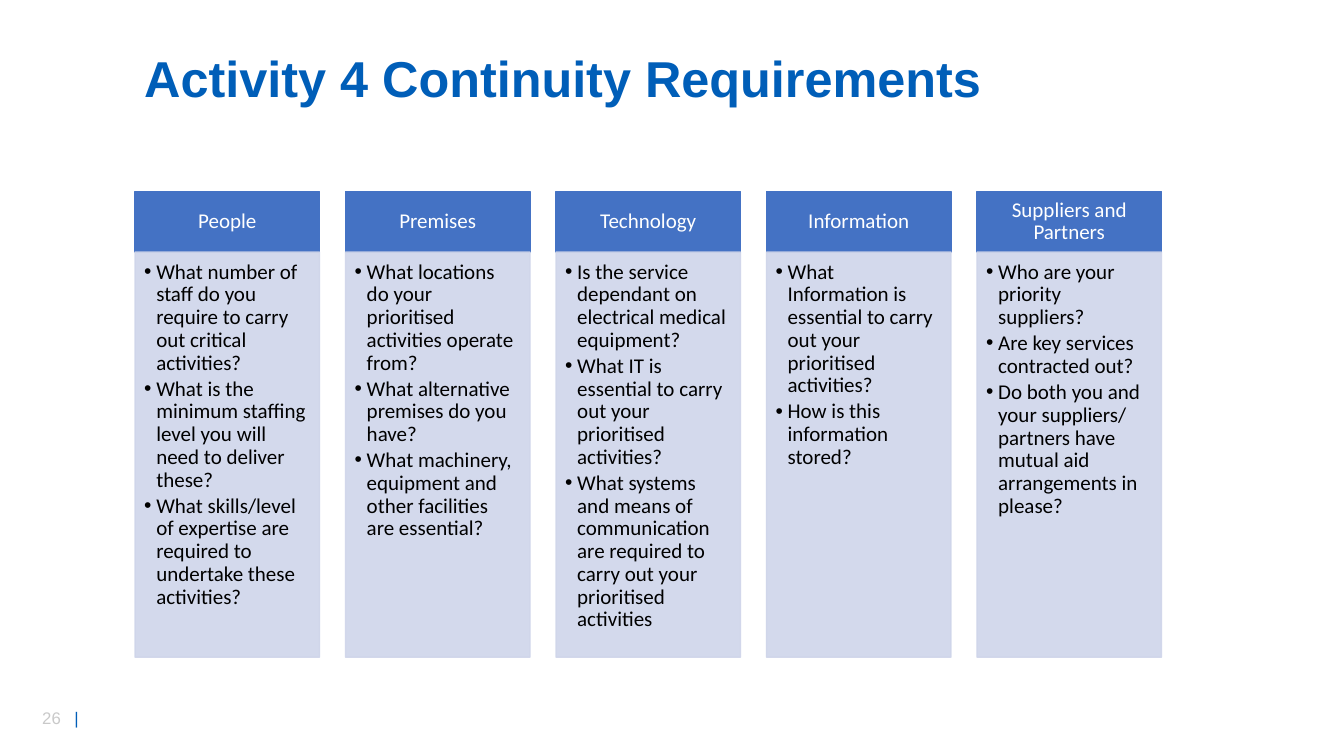
from lxml import etree
from pptx import Presentation
from pptx.dml.color import RGBColor
from pptx.enum.shapes import MSO_SHAPE
from pptx.enum.text import MSO_ANCHOR, PP_ALIGN
from pptx.oxml.ns import qn
from pptx.util import Inches, Pt

RECTANGLE = MSO_SHAPE.RECTANGLE
TOP, MIDDLE = MSO_ANCHOR.TOP, MSO_ANCHOR.MIDDLE
LEFT, CENTER = PP_ALIGN.LEFT, PP_ALIGN.CENTER

FIRST_LEFT, LAST_LEFT, COLUMN_WIDTH = 1.34, 9.69, 1.83
HEADER_TOP, HEADER_HEIGHT = 1.9, 0.6
BODY_TOP, BODY_HEIGHT = HEADER_TOP + HEADER_HEIGHT, 4.02
INDENT = Inches(0.12)

REQUIREMENTS = [
    ("People", [
        "What number of staff do you require to carry out critical activities?",
        "What is the minimum staffing level you will need to deliver these?",
        "What skills/level of expertise are required to undertake these activities?",
    ]),
    ("Premises", [
        "What locations do your prioritised activities operate from?",
        "What alternative premises do you have?",
        "What machinery, equipment and other facilities are essential?",
    ]),
    ("Technology", [
        "Is the service dependant on electrical medical equipment?",
        "What IT is essential to carry out your prioritised activities?",
        "What systems and means of communication are required to carry out your prioritised activities",
    ]),
    ("Information", [
        "What Information is essential to carry out your prioritised activities?",
        "How is this information stored?",
    ]),
    ("Suppliers and Partners", [
        "Who are your priority suppliers?",
        "Are key services contracted out?",
        "Do both you and your suppliers/ partners have mutual aid arrangements in please?",
    ]),
]


def style_font(font, name, size, color, bold=False):
    font.name, font.size, font.bold = name, Pt(size), bold
    font.color.rgb = RGBColor.from_string(color)


def add_panel(left, top, height, color, anchor, insets):
    shape = slide.shapes.add_shape(
        RECTANGLE, Inches(left), Inches(top), Inches(COLUMN_WIDTH), Inches(height))
    shape.shadow.inherit = False
    shape.fill.solid()
    shape.fill.fore_color.rgb = RGBColor.from_string(color)
    shape.line.color.rgb = RGBColor.from_string(color)
    shape.line.width = Pt(1)
    frame = shape.text_frame
    frame.word_wrap = True
    frame.vertical_anchor = anchor
    frame.margin_left, frame.margin_top, frame.margin_right, frame.margin_bottom = map(Inches, insets)
    return shape


presentation = Presentation()
presentation.slide_width, presentation.slide_height = Inches(13.33), Inches(7.5)
slide = presentation.slides.add_slide(presentation.slide_layouts[5])

title = slide.shapes.title
title.left, title.top, title.width, title.height = map(Inches, (1.33, 0.47, 11.64, 0.67))
title.text_frame.text = "Activity 4 Continuity Requirements"
title.text_frame.vertical_anchor = MIDDLE
heading = title.text_frame.paragraphs[0]
heading.alignment = LEFT
heading.line_spacing = 0.9
style_font(heading.runs[0].font, "Arial", 36, "005EB8", True)

pitch = (LAST_LEFT - FIRST_LEFT) / (len(REQUIREMENTS) - 1)
for column, (name, questions) in enumerate(REQUIREMENTS):
    left = FIRST_LEFT + column * pitch
    header = add_panel(left, HEADER_TOP, HEADER_HEIGHT, "4472C4", MIDDLE, (0.12, 0.07, 0.12, 0.07))
    header.text_frame.text = name
    paragraph = header.text_frame.paragraphs[0]
    paragraph.alignment = CENTER
    paragraph.line_spacing = 0.9
    style_font(paragraph.runs[0].font, "Calibri", 15, "FFFFFF")

    body = add_panel(left, BODY_TOP, BODY_HEIGHT, "CFD5EA", TOP, (0.09, 0.09, 0.12, 0.13))
    for color in body.fill._xPr.iter(qn("a:srgbClr")):
        etree.SubElement(color, qn("a:alpha"), val="90000")
    body.text_frame.text = "\n".join(questions)
    for paragraph in body.text_frame.paragraphs:
        paragraph.alignment = LEFT
        paragraph.line_spacing = 0.9
        paragraph.space_after = Pt(2.5)
        properties = paragraph._p.get_or_add_pPr()
        properties.set("marL", str(INDENT))
        properties.set("indent", str(-INDENT))
        etree.SubElement(properties, qn("a:buFont"), typeface="Arial")
        etree.SubElement(properties, qn("a:buChar"), char="•")
        style_font(paragraph.runs[0].font, "Calibri", 15, "000000")

footer = slide.shapes.add_textbox(Inches(0.32), Inches(6.97), Inches(0.71), Inches(0.3))
footer.text_frame.word_wrap = True
paragraph = footer.text_frame.paragraphs[0]
tabs = etree.SubElement(paragraph._p.get_or_add_pPr(), qn("a:tabLst"))
etree.SubElement(tabs, qn("a:tab"), pos=str(Inches(0.32)), algn="l")
for text, color in (("26", "C9C9C9"), ("\t|", "005EB8")):
    run = paragraph.add_run()
    run.text = text
    style_font(run.font, "Arial", 12, color)

presentation.save("out.pptx")
